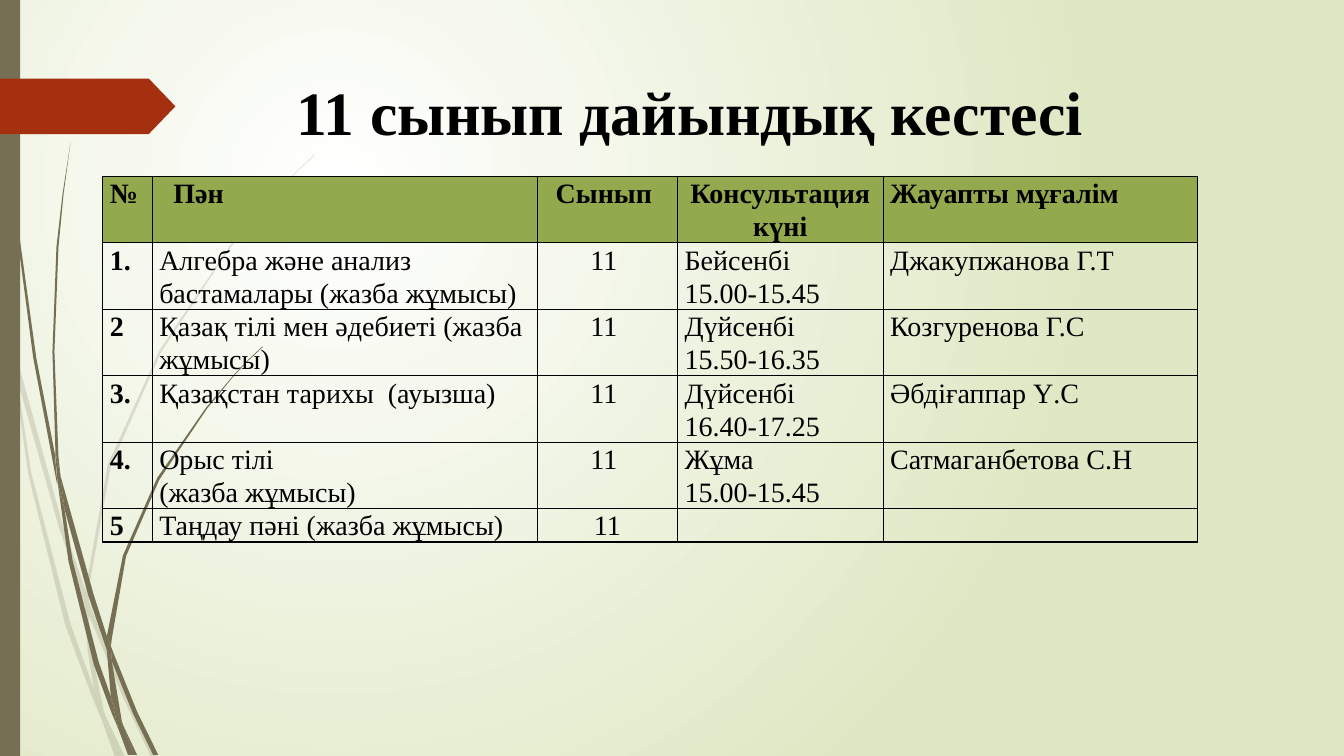
from dataclasses import dataclass

from lxml import etree
from pptx import Presentation
from pptx.dml.color import RGBColor
from pptx.enum.shapes import MSO_SHAPE
from pptx.enum.text import MSO_ANCHOR, PP_ALIGN
from pptx.oxml.ns import qn
from pptx.util import Inches, Pt

LEFT, CENTER, JUSTIFY = PP_ALIGN.LEFT, PP_ALIGN.CENTER, PP_ALIGN.JUSTIFY
TOP = MSO_ANCHOR.TOP
RECT, PENTAGON = MSO_SHAPE.RECTANGLE, MSO_SHAPE.PENTAGON
COLS, ROWS = 1333, 750
CELL = Inches(0.01)


@dataclass(frozen=True)
class Theme:
    """Colours, font and type sizes of the slide."""
    font: str = "Times New Roman"
    ink: str = "000000"
    stem: str = "766F54"
    arrow: str = "A53010"
    header: str = "93A94D"
    glow: str = "FFFFFF"
    field: str = "DFE8C4"
    title_size: int = 44
    body_size: int = 20


THEME = Theme()

PALE_BLADES = [
    [(11, 350), (9, 322), (0, 282), (0, 299), (10, 344)],
    [(58, 522), (84, 599), (85, 586), (62, 520), (14, 345), (17, 376)],
    [(92, 607), (88, 596), (88, 610), (123, 694), (150, 751), (155, 751),
     (127, 692)],
    [(119, 751), (124, 751), (105, 711)],
    [(93, 683), (70, 619), (31, 469), (17, 376), (11, 350), (28, 470),
     (65, 621), (92, 693), (101, 714), (99, 707)],
    [(84, 599), (87, 646), (93, 683), (96, 692), (105, 711), (103, 706),
     (91, 646), (88, 610), (88, 608)],
    [(88, 584), (110, 462), (160, 349), (229, 245), (268, 198), (290, 175),
     (312, 154), (312, 153), (289, 175), (268, 197), (228, 244), (158, 348),
     (107, 461), (85, 584), (85, 586), (88, 596)],
    [(101, 714), (114, 751), (119, 751)],
    [(88, 608), (88, 610), (88, 596), (85, 586), (84, 599)],
    [(96, 692), (93, 683), (99, 707), (101, 714), (119, 751), (105, 711)],
]
SOLID_BLADES = [
    [(7, 110), (17, 233), (33, 355), (56, 477), (57, 481), (55, 457),
     (55, 453), (36, 355), (19, 232), (8, 109), (5, 48), (4, 0), (3, 0),
     (4, 48)],
    [(88, 592), (106, 645), (106, 633), (106, 631), (93, 590), (60, 472),
     (64, 505)],
    [(113, 649), (110, 641), (111, 656), (132, 708), (152, 749), (157, 749),
     (136, 706)],
    [(110, 691), (98, 657), (72, 556), (64, 505), (57, 477), (68, 557),
     (93, 659), (111, 708), (117, 722), (116, 717)],
    [(60, 472), (58, 453), (54, 349), (58, 245), (63, 193), (70, 141),
     (62, 193), (56, 245), (52, 349), (55, 449)],
    [(133, 749), (136, 749), (122, 719)],
    [(57, 477), (64, 505), (60, 472), (55, 449), (55, 453)],
    [(111, 633), (125, 552), (158, 476), (205, 406), (231, 374), (245, 359),
     (261, 344), (260, 344), (245, 358), (231, 373), (204, 405), (156, 474),
     (122, 551), (106, 631), (110, 641)],
    [(117, 722), (127, 749), (131, 749)],
    [(106, 645), (110, 691), (116, 706), (122, 719), (121, 716), (111, 656),
     (109, 651)],
    [(106, 645), (109, 651), (111, 656), (110, 641), (106, 631), (106, 633)],
    [(116, 706), (110, 691), (116, 717), (117, 722), (130, 749), (133, 749),
     (122, 719)],
]

COLUMN_WIDTHS = [49, 382, 139, 204, 312]
ROW_HEIGHTS = [65] * 5 + [32]
HEADER_ALIGNS = [JUSTIFY, JUSTIFY, CENTER, CENTER, JUSTIFY]
BODY_ALIGNS = [LEFT, LEFT, CENTER, LEFT, LEFT]
SCHEDULE = [
    ["№", "Пән", "Сынып ", "Консультация күні", "Жауапты мұғалім"],
    ["1.", "Алгебра және анализ бастамалары (жазба жұмысы)", "11 ",
     "Бейсенбі\n15.00-15.45", "Джакупжанова Г.Т"],
    ["2", "Қазақ тілі мен әдебиеті (жазба жұмысы)", "11 ",
     "Дүйсенбі\n15.50-16.35", "Козгуренова Г.С"],
    ["3.", "Қазақстан тарихы  (ауызша)", "11 ",
     "Дүйсенбі\n16.40-17.25", "Әбдіғаппар Ү.С"],
    ["4.", "Орыс тілі\n(жазба жұмысы)", "11 ",
     "Жұма\n15.00-15.45", "Сатмаганбетова С.Н"],
    ["5", "Таңдау пәні (жазба жұмысы)", "11", "", ""],
]


def box(left, top, width, height):
    """Turn grid columns and rows into slide lengths."""
    return [CELL * v for v in (left, top, width, height)]


def write(tf, text, *, size, bold=False, align=LEFT, spacing=1.0):
    """Write one paragraph per line of text."""
    for i, line in enumerate(text.split("\n")):
        p = tf.add_paragraph() if i else tf.paragraphs[0]
        p.alignment, p.line_spacing = align, spacing
        r = p.add_run()
        r.text = line
        r.font.name, r.font.size, r.font.bold = THEME.font, Pt(size), bold
        r.font.color.rgb = RGBColor.from_string(THEME.ink)


def paint(sp, color, alpha=None):
    """Give a shape a flat fill with no line or shadow."""
    sp.shadow.inherit = False
    sp.line.fill.background()
    sp.fill.solid()
    sp.fill.fore_color.rgb = RGBColor.from_string(color)
    if alpha:
        clr = sp.element.spPr.find(f"{qn('a:solidFill')}/{qn('a:srgbClr')}")
        etree.SubElement(clr, qn("a:alpha"), val=str(alpha * 1000))


def add_background(s):
    """Fill the slide with a glow centred in its upper left quarter."""
    fill = s.background.fill
    fill.gradient()
    for stop, color in zip(fill.gradient_stops, (THEME.glow, THEME.field)):
        stop.color.rgb = RGBColor.from_string(color)
    grad = next(s.element.iter(qn("a:gradFill")))
    glow = etree.Element(qn("a:path"), {"path": "circle"})
    etree.SubElement(glow, qn("a:fillToRect"),
                     l="50000", t="50000", r="100000", b="100000")
    grad.replace(grad.find(qn("a:lin")), glow)


def add_grass(s, blades, alpha=None):
    """Draw a group of grass blades from their outlines."""
    group = s.shapes.add_group_shape()
    for start, *rest in blades:
        fb = group.shapes.build_freeform(*start, scale=CELL)
        fb.add_line_segments(rest, close=True)
        paint(fb.convert_to_shape(), THEME.stem, alpha)


def add_block(s, kind, area, color):
    """Draw a flat preset shape."""
    sp = s.shapes.add_shape(kind, *box(*area))
    paint(sp, color)
    return sp


def add_title(s, text, area):
    """Place and format the title placeholder."""
    sp = s.shapes.title
    sp.left, sp.top, sp.width, sp.height = box(*area)
    sp.text_frame.word_wrap = True
    sp.text_frame.vertical_anchor = TOP
    write(sp.text_frame, text, size=THEME.title_size, bold=True)


def add_borders(cell):
    """Rule all four sides of a table cell."""
    tc_pr = cell._tc.get_or_add_tcPr()
    for i, side in enumerate("LRTB"):
        ln = etree.Element(qn(f"a:ln{side}"), w=str(Pt(1)))
        fill = etree.SubElement(ln, qn("a:solidFill"))
        etree.SubElement(fill, qn("a:srgbClr"), val=THEME.ink)
        tc_pr.insert(i, ln)


def add_schedule(s, left, top):
    """Build the consultation timetable."""
    area = box(left, top, sum(COLUMN_WIDTHS), sum(ROW_HEIGHTS))
    table = s.shapes.add_table(len(SCHEDULE), len(COLUMN_WIDTHS), *area).table
    table.first_row = table.horz_banding = False
    for col, width in zip(table.columns, COLUMN_WIDTHS):
        col.width = CELL * width
    for i, (row, height) in enumerate(zip(table.rows, ROW_HEIGHTS)):
        row.height = CELL * height
        aligns = BODY_ALIGNS if i else HEADER_ALIGNS
        for j, (cell, text) in enumerate(zip(row.cells, SCHEDULE[i])):
            cell.margin_left = cell.margin_right = CELL * 7
            cell.margin_top = cell.margin_bottom = 0
            if i:
                cell.fill.background()
            else:
                cell.fill.solid()
                cell.fill.fore_color.rgb = RGBColor.from_string(THEME.header)
            add_borders(cell)
            if text:
                write(cell.text_frame, text, size=THEME.body_size,
                      bold=i == 0 or j == 0, align=aligns[j], spacing=1.07)
    table.cell(0, 1).margin_left = CELL * 21


def main():
    """Build and save the slide."""
    prs = Presentation()
    prs.slide_width, prs.slide_height = CELL * COLS, CELL * ROWS
    s = prs.slides.add_slide(prs.slide_layouts[5])
    add_background(s)
    add_grass(s, PALE_BLADES, alpha=20)
    add_grass(s, SOLID_BLADES)
    add_block(s, RECT, (0, 0, 20, ROWS), THEME.stem)
    arrow = add_block(s, PENTAGON, (0, 78, 174, 55), THEME.arrow)
    arrow.adjustments[0] = 0.48
    add_title(s, "11 сынып дайындық кестесі", (284, 68, 975, 140))
    add_schedule(s, 102, 175)
    prs.save("out.pptx")


if __name__ == "__main__":
    main()
